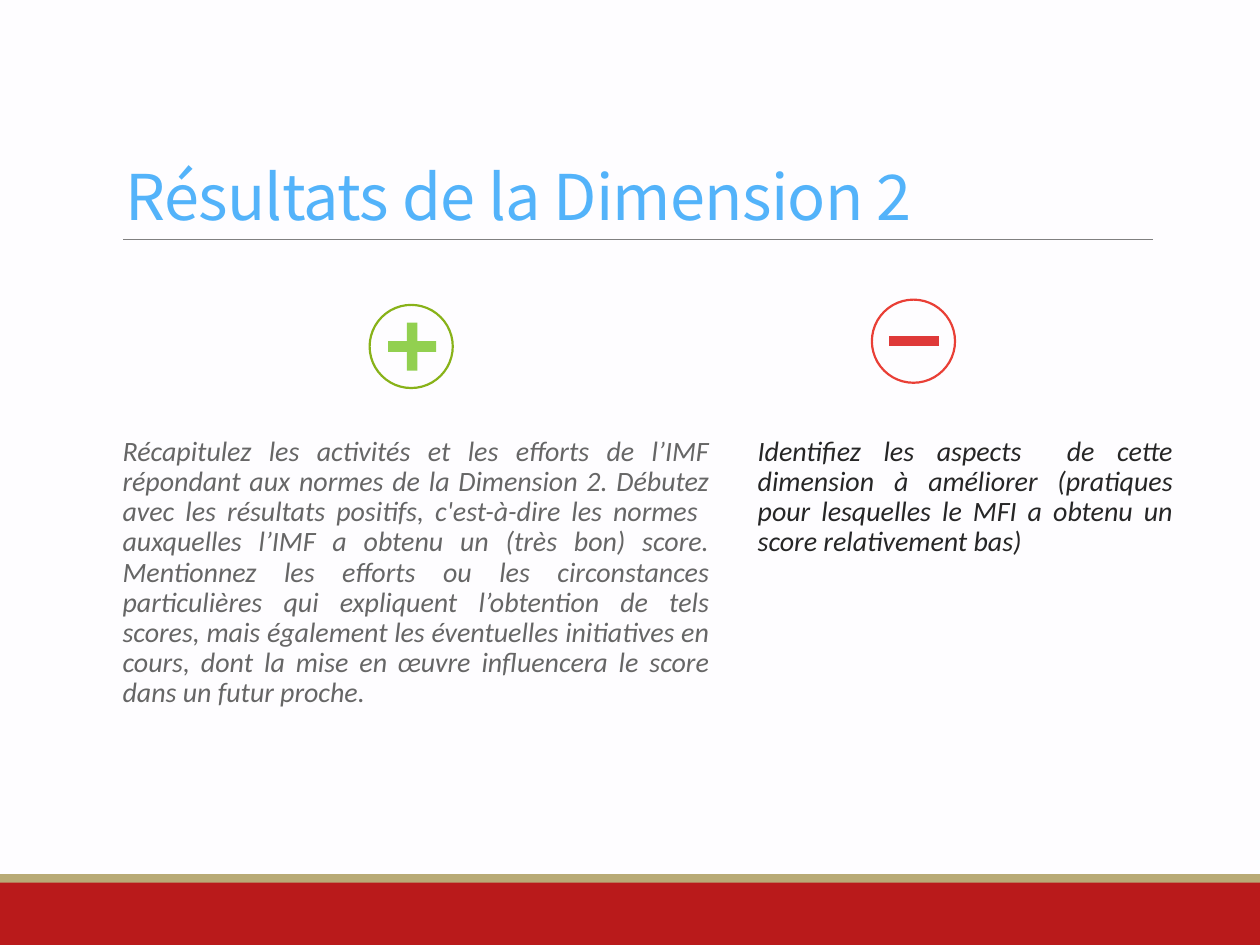
from lxml.etree import SubElement
from pptx import Presentation
from pptx.dml.color import RGBColor
from pptx.enum.shapes import MSO_CONNECTOR, MSO_SHAPE
from pptx.enum.text import MSO_ANCHOR, PP_ALIGN
from pptx.oxml.ns import qn
from pptx.util import Pt

WIDTH, HEIGHT = 720, 540
TITLE = "Résultats de la Dimension 2"
BANDS = [("B91A1B", 504, 36), ("B8AA76", 499.5, 5)]  # colour, top, height
COLUMNS = [  # text: left, width, colour, wording
    (64.8, 340.6, "666666",
     "Récapitulez les activités et les efforts de l’IMF répondant aux normes de la "
     "Dimension 2. Débutez avec les résultats positifs, c'est-à-dire les normes  "
     "auxquelles l’IMF a obtenu un (très bon) score. Mentionnez les efforts ou les "
     "circonstances particulières qui expliquent l’obtention de tels scores, mais "
     "également les éventuelles initiatives en cours, dont la mise en œuvre "
     "influencera le score dans un futur proche."),
    (427.7, 242.6, "262626",
     "Identifiez les aspects  de cette dimension à améliorer (pratiques pour "
     "lesquelles le MFI a obtenu un score relativement bas)"),
]
SIGNS = [  # sign, centre x, centre y, width, height, fill, ring colour
    (MSO_SHAPE.FLOWCHART_PROCESS, 522, 195, 28.4, 5.8, "DF3939", "E93F36"),
    (MSO_SHAPE.CROSS, 235, 198, 27.4, 27.4, "92D050", "88B219"),
]
RING = 47.5
TEXT_TOP, TEXT_HEIGHT, HANG = 246.2, 255.6, 5.3


def rgb(value):
    return RGBColor.from_string(value)


def add_shape(kind, left, top, width, height, fill=None, line=None):
    shape = slide.shapes.add_shape(kind, Pt(left), Pt(top), Pt(width), Pt(height))
    shape.shadow.inherit = False
    if fill:
        shape.fill.solid()
        shape.fill.fore_color.rgb = rgb(fill)
    else:
        shape.fill.background()
    if line:
        shape.line.color.rgb = rgb(line)
        shape.line.width = Pt(1.25)
    else:
        shape.line.fill.background()
    return shape


def add_text(wording, left, top, width, height, font, size, color, spacing):
    """Add a one-run text box; return its frame, paragraph and run."""
    frame = slide.shapes.add_textbox(Pt(left), Pt(top), Pt(width), Pt(height)).text_frame
    frame.word_wrap = True
    paragraph = frame.paragraphs[0]
    paragraph.line_spacing = spacing
    run = paragraph.add_run()
    run.text = wording
    run.font.name = font
    run.font.size = Pt(size)
    run.font.color.rgb = rgb(color)
    return frame, paragraph, run


presentation = Presentation()
presentation.slide_width, presentation.slide_height = Pt(WIDTH), Pt(HEIGHT)
slide = presentation.slides.add_slide(presentation.slide_layouts[6])
slide.background.fill.solid()
slide.background.fill.fore_color.rgb = rgb("FEFDFF")

for color, top, height in BANDS:
    add_shape(MSO_SHAPE.RECTANGLE, 0, top, WIDTH, height, color)

rule = slide.shapes.add_connector(MSO_CONNECTOR.STRAIGHT, Pt(70.4), Pt(136.8), Pt(658.8), Pt(136.8))
rule.line.color.rgb = rgb("808080")
rule.line.width = Pt(0.5)
SubElement(rule._element.spPr, qn("a:effectLst"))

title_frame, _, title_run = add_text(
    TITLE, 64.8, 22.3, 594, 114.5, "Noto Sans CJK KR", 36, "53B3FA", 0.85)
title_frame.vertical_anchor = MSO_ANCHOR.BOTTOM
title_run.font._element.set("spc", "-40")

for left, width, color, wording in COLUMNS:
    frame, paragraph, run = add_text(
        wording, left, TEXT_TOP, width, TEXT_HEIGHT, "Calibri", 16, color, 0.9)
    frame.margin_left, frame.margin_right = Pt(HANG), 0
    paragraph.alignment = PP_ALIGN.JUSTIFY
    run.font.italic = True

for kind, x, y, width, height, fill, ring in SIGNS:
    sign = add_shape(kind, x - width / 2 + 0.5, y - height / 2, width, height, fill)
    if kind == MSO_SHAPE.CROSS:
        sign.adjustments[0] = 0.39
    add_shape(MSO_SHAPE.OVAL, x - RING / 2, y - RING / 2, RING, RING, line=ring)

presentation.save("out.pptx")
